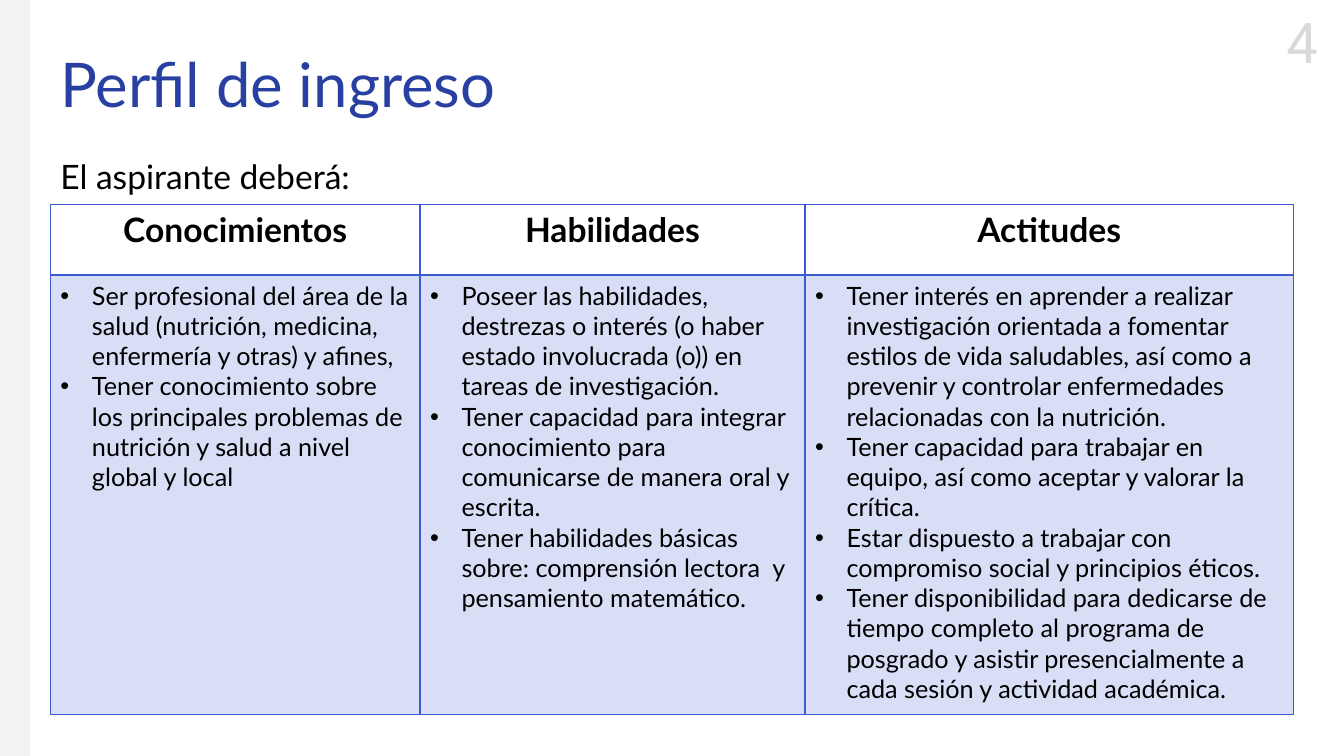
from lxml.etree import SubElement
from pptx import Presentation
from pptx.dml.color import RGBColor
from pptx.enum.shapes import MSO_SHAPE
from pptx.enum.text import MSO_ANCHOR, PP_ALIGN
from pptx.oxml.ns import qn
from pptx.util import Pt
from dataclasses import dataclass


@dataclass(frozen=True)
class Theme:
    title: str = "2840A1"
    text: str = "000000"
    number: str = "D9D9D9"
    band: str = "F2F2F2"
    accent: str = "3C5ACF"
    font: str = "Lato"
    number_font: str = "Roboto"
    title_size: int = 44
    number_size: int = 40
    heading_size: int = 24
    body_size: int = 18


theme = Theme()
columns = [
    ("Conocimientos", 264, [
        "Ser profesional del área de la salud (nutrición, medicina, enfermería y otras) y afines,",
        "Tener conocimiento sobre los principales problemas de nutrición y salud a nivel global y local",
    ]),
    ("Habilidades", 275, [
        "Poseer las habilidades, destrezas o interés (o haber estado involucrada (o)) en tareas de investigación.",
        "Tener capacidad para integrar conocimiento para comunicarse de manera oral y escrita.",
        "Tener habilidades básicas sobre: comprensión lectora  y pensamiento matemático.",
    ]),
    ("Actitudes", 349, [
        "Tener interés en aprender a realizar investigación orientada a fomentar estilos de vida saludables, "
        "así como a prevenir y controlar enfermedades relacionadas con la nutrición.",
        "Tener capacidad para trabajar en equipo, así como aceptar y valorar la crítica.",
        "Estar dispuesto a trabajar con compromiso social y principios éticos.",
        "Tener disponibilidad para dedicarse de tiempo completo al programa de posgrado y asistir "
        "presencialmente a cada sesión y actividad académica.",
    ]),
]


def style_paragraph(para, size, color=theme.text, font=theme.font, bold=False):
    para.font.size = Pt(size)
    para.font.name = font
    para.font.bold = bold
    para.font.color.rgb = RGBColor.from_string(color)


def add_borders(cell, bottom_width):
    properties = cell._tc.get_or_add_tcPr()
    for position, side in enumerate(("L", "R", "T", "B")):
        width = bottom_width if side == "B" else 1
        line = SubElement(properties, qn(f"a:ln{side}"), w=str(Pt(width)))
        fill = SubElement(line, qn("a:solidFill"))
        SubElement(fill, qn("a:srgbClr"), val=theme.accent)
        properties.insert(position, line)


deck = Presentation()
deck.slide_width, deck.slide_height = Pt(960), Pt(540)
page = deck.slides.add_slide(deck.slide_layouts[6])

band = page.shapes.add_shape(MSO_SHAPE.RECTANGLE, Pt(0), Pt(0), Pt(21.6), Pt(540))
band.shadow.inherit = False
band.fill.solid()
band.fill.fore_color.rgb = RGBColor.from_string(theme.band)
band.line.fill.background()

labels = [
    ("4", (903, 1.5, 54, 55.5), theme.number_size, theme.number, theme.number_font,
     PP_ALIGN.CENTER, MSO_ANCHOR.TOP, 1.0),
    ("Perfil de ingreso", (36, 10, 828, 104.4), theme.title_size, theme.title, theme.font,
     PP_ALIGN.LEFT, MSO_ANCHOR.MIDDLE, 0.9),
    ("El aspirante deberá:", (36, 111, 828, 44), theme.heading_size, theme.text, theme.font,
     PP_ALIGN.LEFT, MSO_ANCHOR.TOP, 0.9),
]
for text, place, size, color, font, alignment, anchor, spacing in labels:
    box = page.shapes.add_textbox(*map(Pt, place))
    box.text_frame.word_wrap = True
    box.text_frame.vertical_anchor = anchor
    para = box.text_frame.paragraphs[0]
    para.text = text
    para.alignment = alignment
    para.line_spacing = spacing
    style_paragraph(para, size, color, font)

total_width = sum(width for _, width, _ in columns)
table = page.shapes.add_table(2, len(columns), Pt(36), Pt(146.2), Pt(total_width), Pt(364.4)).table
table.first_row = False
table.horz_banding = False
table.rows[0].height, table.rows[1].height = Pt(50.4), Pt(314)

for index, (heading, width, items) in enumerate(columns):
    table.columns[index].width = Pt(width)

    header = table.cell(0, index)
    header.fill.background()
    add_borders(header, 2)
    para = header.text_frame.paragraphs[0]
    para.text = heading
    para.alignment = PP_ALIGN.CENTER
    style_paragraph(para, theme.heading_size, bold=True)

    content = table.cell(1, index)
    content.fill.solid()
    content.fill.fore_color.rgb = RGBColor.from_string(theme.accent)
    tint = content._tc.tcPr.find(qn("a:solidFill")).find(qn("a:srgbClr"))
    SubElement(tint, qn("a:alpha"), val="20000")
    add_borders(content, 1)
    frame = content.text_frame
    for number, item in enumerate(items):
        para = frame.add_paragraph() if number else frame.paragraphs[0]
        para.text = item
        properties = para._p.get_or_add_pPr()
        properties.set("marL", str(Pt(22.5)))
        properties.set("indent", str(-Pt(22.5)))
        SubElement(properties, qn("a:buFont"), typeface="Arial")
        SubElement(properties, qn("a:buChar"), char="•")
        style_paragraph(para, theme.body_size)

deck.save("out.pptx")
